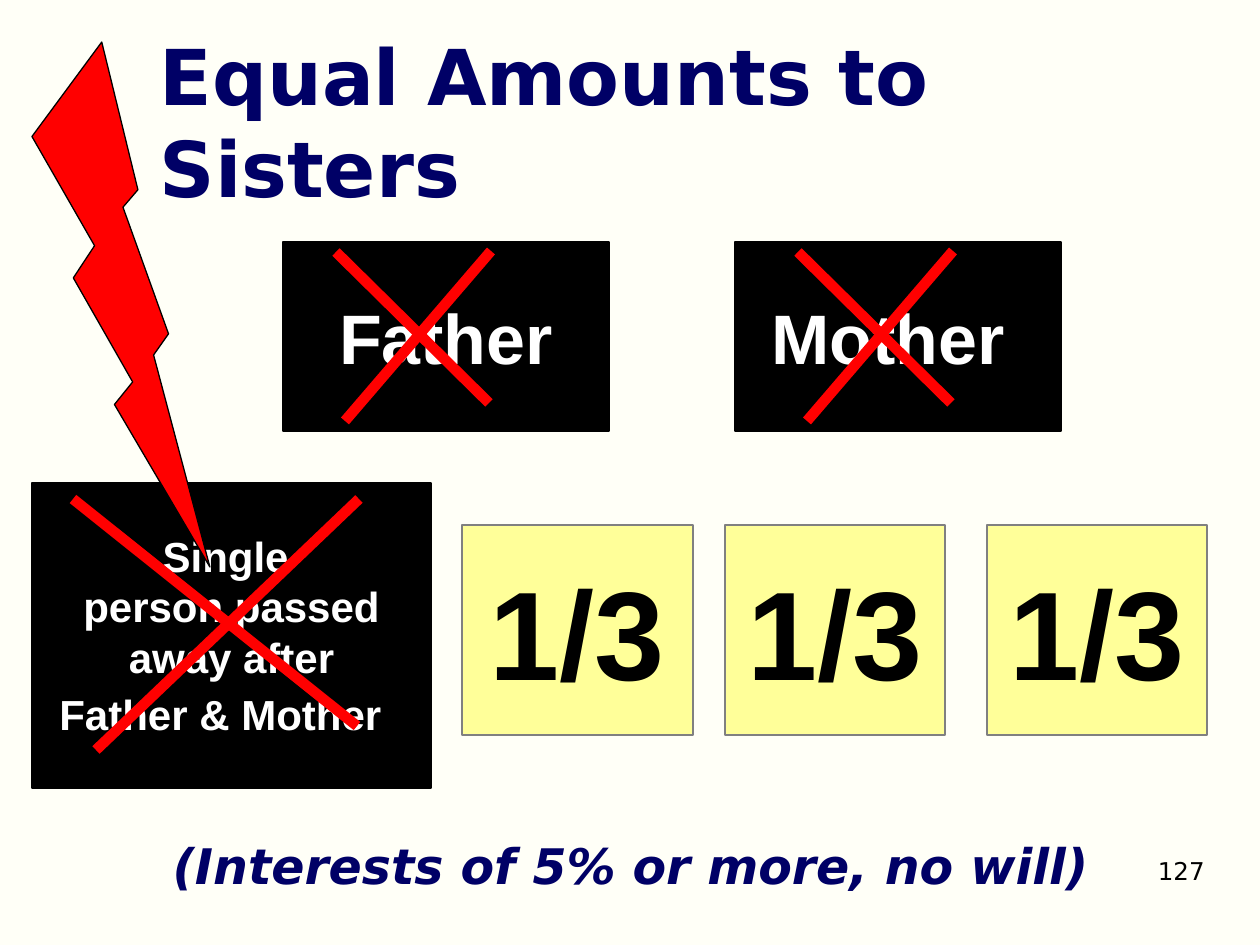
from lxml import etree
from pptx import Presentation
from pptx.dml.color import RGBColor
from pptx.enum.shapes import MSO_CONNECTOR, MSO_SHAPE
from pptx.enum.text import MSO_ANCHOR, MSO_AUTO_SIZE, PP_ALIGN
from pptx.oxml.ns import qn
from pptx.util import Pt

RECT, BOLT = MSO_SHAPE.RECTANGLE, MSO_SHAPE.LIGHTNING_BOLT
LINE = MSO_CONNECTOR.STRAIGHT
MIDDLE = MSO_ANCHOR.MIDDLE
NONE = MSO_AUTO_SIZE.NONE
LEFT, CENTER, RIGHT = PP_ALIGN.LEFT, PP_ALIGN.CENTER, PP_ALIGN.RIGHT

IVORY = RGBColor(0xFF, 0xFF, 0xF7)
BLACK = RGBColor(0, 0, 0)
WHITE = RGBColor(0xFF, 0xFF, 0xFF)
RED = RGBColor(0xFF, 0, 0)
NAVY = RGBColor(0, 0, 0x66)
YELLOW = RGBColor(0xFF, 0xFF, 0x99)
GRAY = RGBColor(0x80, 0x80, 0x80)
PX = 914400 / 126


def emu(*sizes):
    return [round(n * PX) for n in sizes]


def write(par, text, align, color, **form):
    par.alignment = align
    run = par.add_run()
    run.text = text
    run.font.color.rgb = color
    for key, val in form.items():
        setattr(run.font, key, val)


prs = Presentation()
prs.slide_width, prs.slide_height = emu(1260, 945)
slide = prs.slides.add_slide(prs.slide_layouts[5])
slide.background.fill.solid()
slide.background.fill.fore_color.rgb = IVORY
shapes = slide.shapes

title = shapes.title
title.left, title.top, title.width, title.height = emu(147, 42, 1050, 157)
frame = title.text_frame
frame.auto_size = NONE
frame.vertical_anchor = MIDDLE
write(frame.paragraphs[0], "Equal Amounts to Sisters", LEFT, NAVY,
      name="DejaVu Sans", size=Pt(44), bold=True)

single = ["Single ", "person passed", " away after ", "Father & Mother"]
third = ["1/3"]
boxes = [
    (RECT, (32, 483, 399, 305), BLACK, BLACK, 1, single, 24, WHITE),
    (RECT, (462, 525, 231, 210), YELLOW, GRAY, 1, third, 72, BLACK),
    (RECT, (725, 525, 220, 210), YELLOW, GRAY, 1, third, 72, BLACK),
    (RECT, (987, 525, 220, 210), YELLOW, GRAY, 1, third, 72, BLACK),
    (RECT, (283, 242, 326, 189), BLACK, BLACK, 1, ["Father"], 40, WHITE),
    (RECT, (735, 242, 326, 189), BLACK, BLACK, 1, ["Mother "], 40, WHITE),
    (BOLT, (32, 42, 178, 525), RED, BLACK, 0.75, [], 0, WHITE),
]
for kind, place, fill, edge, width, lines, size, ink in boxes:
    box = shapes.add_shape(kind, *emu(*place))
    box.shadow.inherit = False
    box.fill.solid()
    box.fill.fore_color.rgb = fill
    box.line.color.rgb = edge
    box.line.width = Pt(width)
    frame = box.text_frame
    frame.word_wrap = False
    frame.vertical_anchor = MIDDLE
    for i, text in enumerate(lines):
        par = frame.add_paragraph() if i else frame.paragraphs[0]
        write(par, text, CENTER, ink, name="Arial", size=Pt(size), bold=True)
    if lines is single:
        for size, bold in ((18, False), (28, True)):
            write(par, " ", CENTER, ink, name="Arial", size=Pt(size), bold=bold)

cross = [(489, 403, 336, 252), (345, 421, 491, 251)]
strokes = [(357, 726, 73, 499), (96, 750, 359, 499)]
for shift in (0, 462):
    strokes += [(a + shift, b, c + shift, d) for a, b, c, d in cross]
for ends in strokes:
    line = shapes.add_connector(LINE, *emu(*ends))
    line.line.color.rgb = RED
    line.line.width = Pt(6)
    etree.SubElement(line._element.spPr, qn("a:effectLst"))

notes = [
    ((924, 850, 293, 66), "127", RIGHT, BLACK, {"size": Pt(14)}),
    ((32, 829, 1197, 72), "(Interests of 5% or more, no will)", CENTER, NAVY,
     {"size": Pt(28), "bold": True, "italic": True}),
]
for place, text, align, ink, form in notes:
    frame = shapes.add_textbox(*emu(*place)).text_frame
    frame.word_wrap = True
    write(frame.paragraphs[0], text, align, ink, name="DejaVu Sans", **form)

prs.save("out.pptx")
